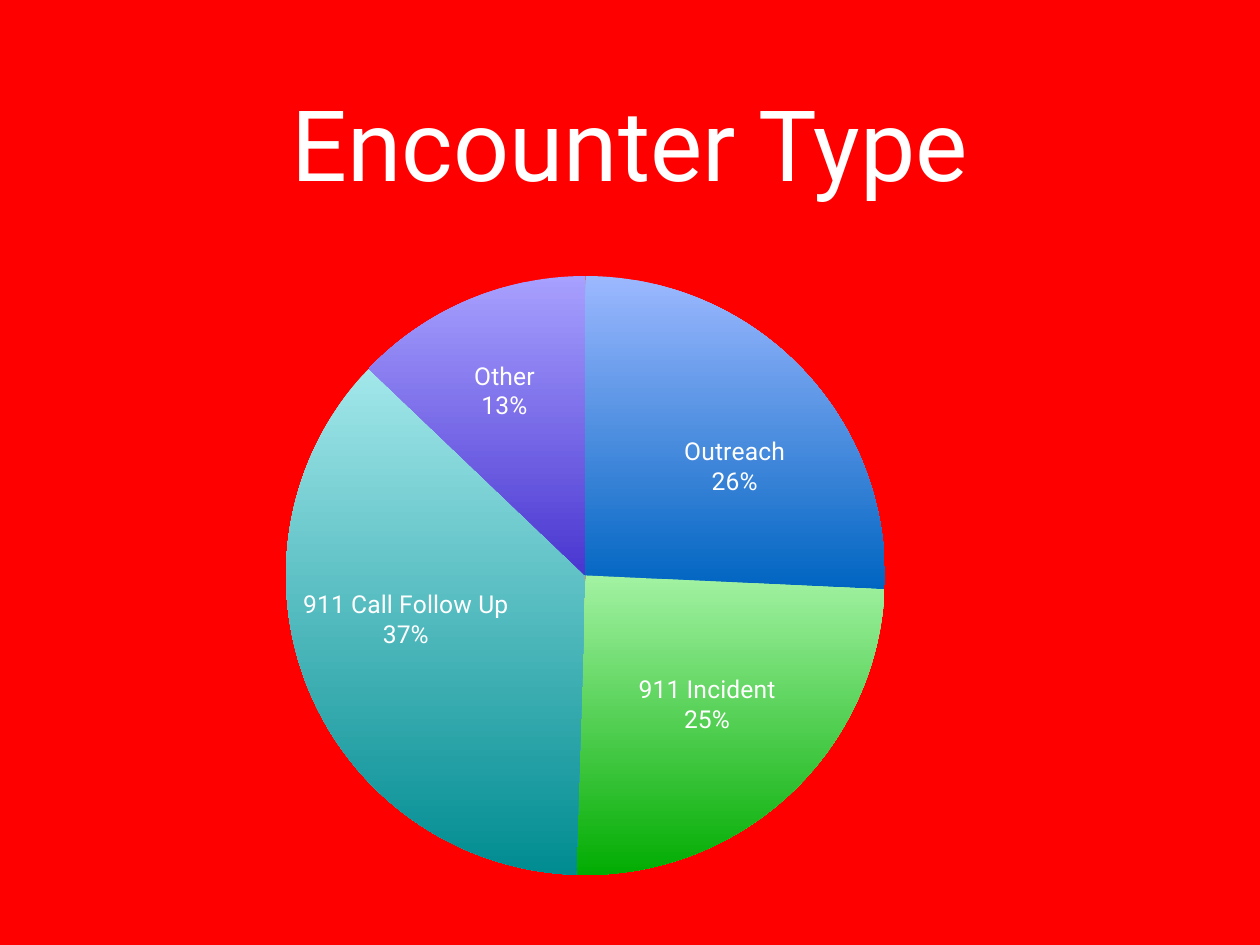
"""Build the encounter type slide with its pie chart."""
from lxml import etree
from pptx import Presentation, util as u
from pptx.chart.data import CategoryChartData
from pptx.dml.color import RGBColor
from pptx.enum import chart as ch, text
from pptx.oxml.ns import qn

RED = RGBColor(0xFF, 0x00, 0x00)
WHITE = RGBColor(0xFF, 0xFF, 0xFF)
BLUES = RGBColor(0x9C, 0xB8, 0xFF), RGBColor(0x00, 0x65, 0xC1)
GREENS = RGBColor(0xA2, 0xF2, 0xA2), RGBColor(0x02, 0xAC, 0x02)
TEALS = RGBColor(0xA2, 0xE7, 0xEA), RGBColor(0x00, 0x8C, 0x91)
PURPLES = RGBColor(0xA8, 0xA0, 0xFF), RGBColor(0x49, 0x36, 0xD0)

ENCOUNTERS = [
    ("Outreach", 26, BLUES, (41, -5)),
    ("911 Incident", 25, GREENS, (20, 20)),
    ("911 Call Follow Up", 37, TEALS, (-41, -12)),
    ("Other", 13, PURPLES, (-22, -46)),
]


def px(n):
    return u.Emu(n * 10321)


def add_layout(parent, index, **values):
    layout = etree.Element(qn("c:layout"))
    manual = etree.SubElement(layout, qn("c:manualLayout"))
    for tag, val in values.items():
        etree.SubElement(manual, qn("c:" + tag)).set("val", str(val))
    for old in parent.findall(qn("c:layout")):
        parent.remove(old)
    parent.insert(index, layout)


class Deck:
    def __init__(self, width, height, font="Roboto", color=WHITE):
        self.prs = Presentation()
        self.prs.slide_width, self.prs.slide_height = px(width), px(height)
        self.font, self.color = font, color

    def slide(self, background):
        self.s = self.prs.slides.add_slide(self.prs.slide_layouts[5])
        fill = self.s.background.fill
        fill.solid()
        fill.fore_color.rgb = background

    def style(self, font, size):
        font.name, font.size, font.color.rgb = self.font, u.Pt(size), self.color

    def title(self, words, box, size):
        sp = self.s.shapes.title
        sp.left, sp.top, sp.width, sp.height = map(px, box)
        tf = sp.text_frame
        tf.word_wrap, tf.auto_size = True, text.MSO_AUTO_SIZE.NONE
        tf.vertical_anchor = text.MSO_ANCHOR.MIDDLE
        tf.margin_left = tf.margin_right = tf.margin_top = tf.margin_bottom = px(5)
        p = tf.paragraphs[0]
        p.alignment = text.PP_ALIGN.CENTER
        r = p.add_run()
        r.text = words
        self.style(r.font, size)

    def pie(self, rows, box, plot_box, size):
        data = CategoryChartData()
        data.categories = [row[0] for row in rows]
        data.add_series("Series 1", [row[1] for row in rows])
        frame = self.s.shapes.add_chart(ch.XL_CHART_TYPE.PIE, *map(px, box), data)
        chart = frame.chart
        chart.has_legend = chart.has_title = False
        self.style(chart.font, 10)
        left, top, width, height = box
        x, y, w, h = plot_box
        area = chart._chartSpace.find(".//" + qn("c:plotArea"))
        add_layout(area, 0, layoutTarget="inner", xMode="edge", yMode="edge",
                   x=round((x - left) / width, 4), y=round((y - top) / height, 4),
                   w=round(w / width, 4), h=round(h / height, 4))
        plot = chart.plots[0]
        plot.vary_by_categories = True
        for i, (_, _, colors, _) in enumerate(rows):
            point = plot.series[0].points[i]
            fill = point.format.fill
            fill.gradient()
            fill.gradient_angle = 270
            for stop, color in zip(fill.gradient_stops, colors):
                stop.color.rgb = color
            point.format.line.fill.background()
            self.style(point.data_label.font, size)
            point.data_label.position = ch.XL_LABEL_POSITION.CENTER
        for label, row in zip(area.iter(qn("c:dLbl")), rows):
            dx, dy = row[3]
            add_layout(label, 1, x=round(dx / width, 4), y=round(dy / height, 4))
            for tag, on in (("Val", 0), ("CatName", 1), ("Percent", 1)):
                label.find(qn("c:show" + tag)).set("val", str(on))
            etree.SubElement(label, qn("c:separator")).text = "\n"


def main():
    deck = Deck(1260, 945)
    deck.slide(RED)
    deck.title("Encounter Type", (92, 39, 1076, 206), 80)
    deck.pie(ENCOUNTERS, (151, 212, 958, 699), (286, 276, 599, 599), 20)
    deck.prs.save("out.pptx")


if __name__ == "__main__":
    main()
